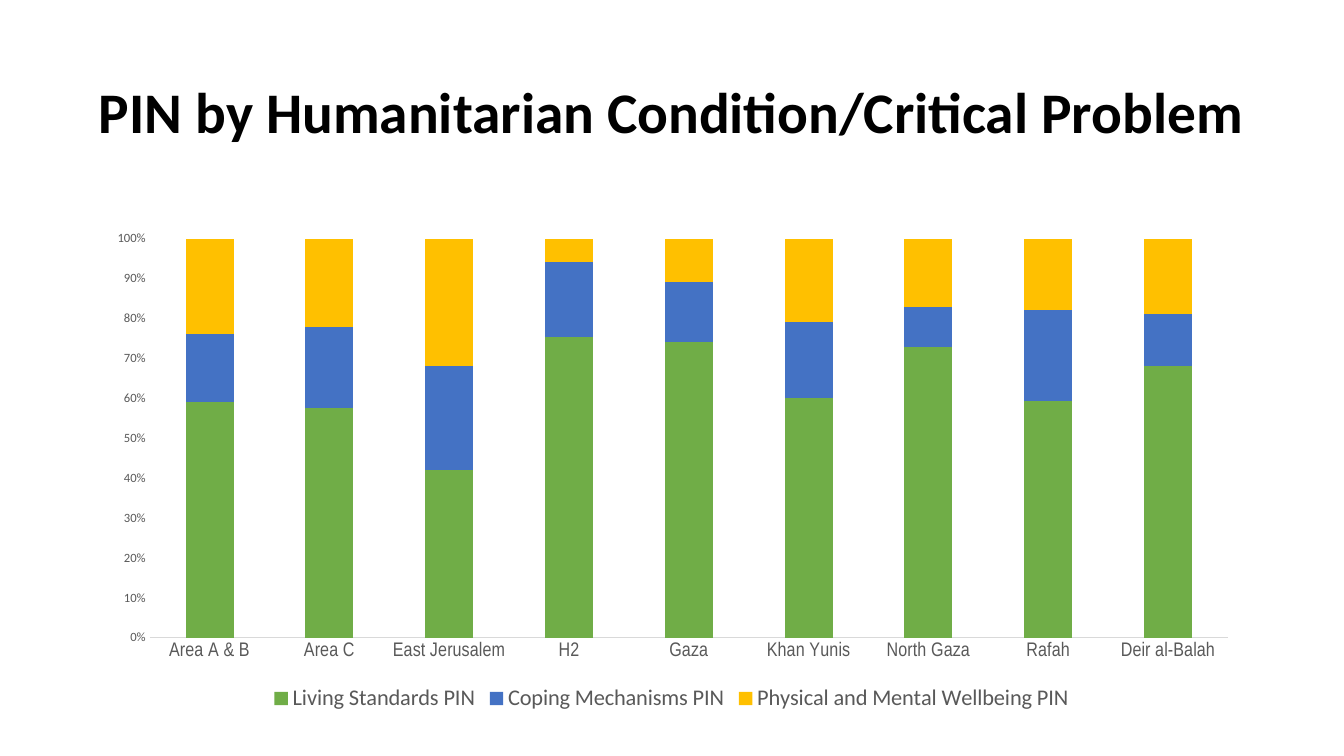
from dataclasses import dataclass

from lxml import etree
from pptx import Presentation
from pptx import util as u
from pptx.chart import data as chart_data
from pptx.dml import color
from pptx.enum import chart as chart_enum, text
from pptx.oxml import ns


@dataclass(frozen=True)
class Theme:
    font: str = "Calibri"
    category_font: str = "Arial Narrow"
    ink: str = "000000"
    label: str = "595959"
    axis_line: str = "D9D9D9"
    title_size: int = 41
    chart_size: int = 10
    category_size: int = 14
    value_size: int = 9
    legend_size: int = 16


THEME = Theme()

AREAS = ["Area A & B", "Area C", "East Jerusalem", "H2", "Gaza",
         "Khan Yunis", "North Gaza", "Rafah", "Deir al-Balah"]

# Series name, fill colour, share of people in need by area
CONDITIONS = [
    ("Living Standards PIN", "70AD47", [59, 57, 42, 76, 74, 60, 72, 60, 68]),
    ("Coping Mechanisms PIN", "4472C4", [17, 20, 26, 19, 15, 19, 10, 23, 13]),
    ("Physical and Mental Wellbeing PIN", "FFC000",
     [24, 22, 32, 6, 11, 21, 17, 18, 19]),
]

# Inner plot area as fractions of the chart frame
PLOT_LAYOUT = {"x": 0.05, "y": 0.03, "w": 0.93, "h": 0.81}


def set_values(target, values):
    for name, value in values.items():
        setattr(target, name, value)


def set_font(font, size, rgb, name=THEME.font, bold=False):
    set_values(font, {"size": u.Pt(size), "name": name, "bold": bold})
    font.color.rgb = color.RGBColor.from_string(rgb)


def add_title(page, wording):
    box = page.shapes.title
    set_values(box, {"left": u.Inches(0.7), "top": u.Inches(0.46),
                     "width": u.Inches(11.93), "height": u.Inches(1.37)})
    set_values(box.text_frame, {"word_wrap": True,
                                "auto_size": text.MSO_AUTO_SIZE.NONE,
                                "vertical_anchor": text.MSO_ANCHOR.MIDDLE})
    para = box.text_frame.paragraphs[0]
    set_values(para, {"alignment": text.PP_ALIGN.CENTER, "line_spacing": 0.9,
                      "space_after": u.Pt(6)})
    span = para.add_run()
    span.text = wording
    set_font(span.font, THEME.title_size, THEME.ink, bold=True)


def place_plot(chart, fractions):
    plot_area = chart.element.find(".//" + ns.qn("c:plotArea"))
    for old in plot_area.findall(ns.qn("c:layout")):
        plot_area.remove(old)
    layout = etree.Element(ns.qn("c:layout"))
    manual = etree.SubElement(layout, ns.qn("c:manualLayout"))
    settings = {"layoutTarget": "inner", "xMode": "edge", "yMode": "edge",
                **fractions}
    for tag, value in settings.items():
        etree.SubElement(manual, ns.qn("c:" + tag)).set("val", str(value))
    plot_area.insert(0, layout)


def format_axis(axis, size, font_name):
    set_values(axis, {"major_tick_mark": chart_enum.XL_TICK_MARK.NONE,
                      "minor_tick_mark": chart_enum.XL_TICK_MARK.NONE,
                      "has_major_gridlines": False})
    set_font(axis.tick_labels.font, size, THEME.label, font_name)


def add_condition_chart(page):
    shares = chart_data.CategoryChartData(number_format="0")
    shares.categories = AREAS
    for name, _, values in CONDITIONS:
        shares.add_series(name, values)
    frame = page.shapes.add_chart(
        chart_enum.XL_CHART_TYPE.COLUMN_STACKED_100, u.Inches(0.91),
        u.Inches(2.22), u.Inches(11.5), u.Inches(4.89), shares)
    chart = frame.chart
    chart.has_title = False
    set_font(chart.font, THEME.chart_size, THEME.ink)
    place_plot(chart, PLOT_LAYOUT)

    # Columns
    plot = chart.plots[0]
    set_values(plot, {"gap_width": 150, "overlap": 100,
                      "vary_by_categories": False})
    for series, (_, rgb, _) in zip(plot.series, CONDITIONS):
        series.format.fill.solid()
        series.format.fill.fore_color.rgb = color.RGBColor.from_string(rgb)

    # Axes
    areas, percent = chart.category_axis, chart.value_axis
    format_axis(areas, THEME.category_size, THEME.category_font)
    areas.format.line.width = u.Pt(0.75)
    areas.format.line.color.rgb = color.RGBColor.from_string(THEME.axis_line)
    format_axis(percent, THEME.value_size, THEME.font)
    percent.format.line.fill.background()
    set_values(percent, {"minimum_scale": 0, "maximum_scale": 1,
                         "major_unit": 0.1})
    set_values(percent.tick_labels, {"number_format": "0%",
                                     "number_format_is_linked": False})

    # Legend
    chart.has_legend = True
    set_values(chart.legend, {
        "position": chart_enum.XL_LEGEND_POSITION.BOTTOM,
        "include_in_layout": False})
    set_font(chart.legend.font, THEME.legend_size, THEME.label)


def main():
    deck = Presentation()
    set_values(deck, {"slide_width": u.Inches(13.33),
                      "slide_height": u.Inches(7.5)})
    page = deck.slides.add_slide(deck.slide_layouts[5])  # Title Only
    add_condition_chart(page)
    add_title(page, "PIN by Humanitarian Condition/Critical Problem")
    deck.save("out.pptx")


if __name__ == "__main__":
    main()
